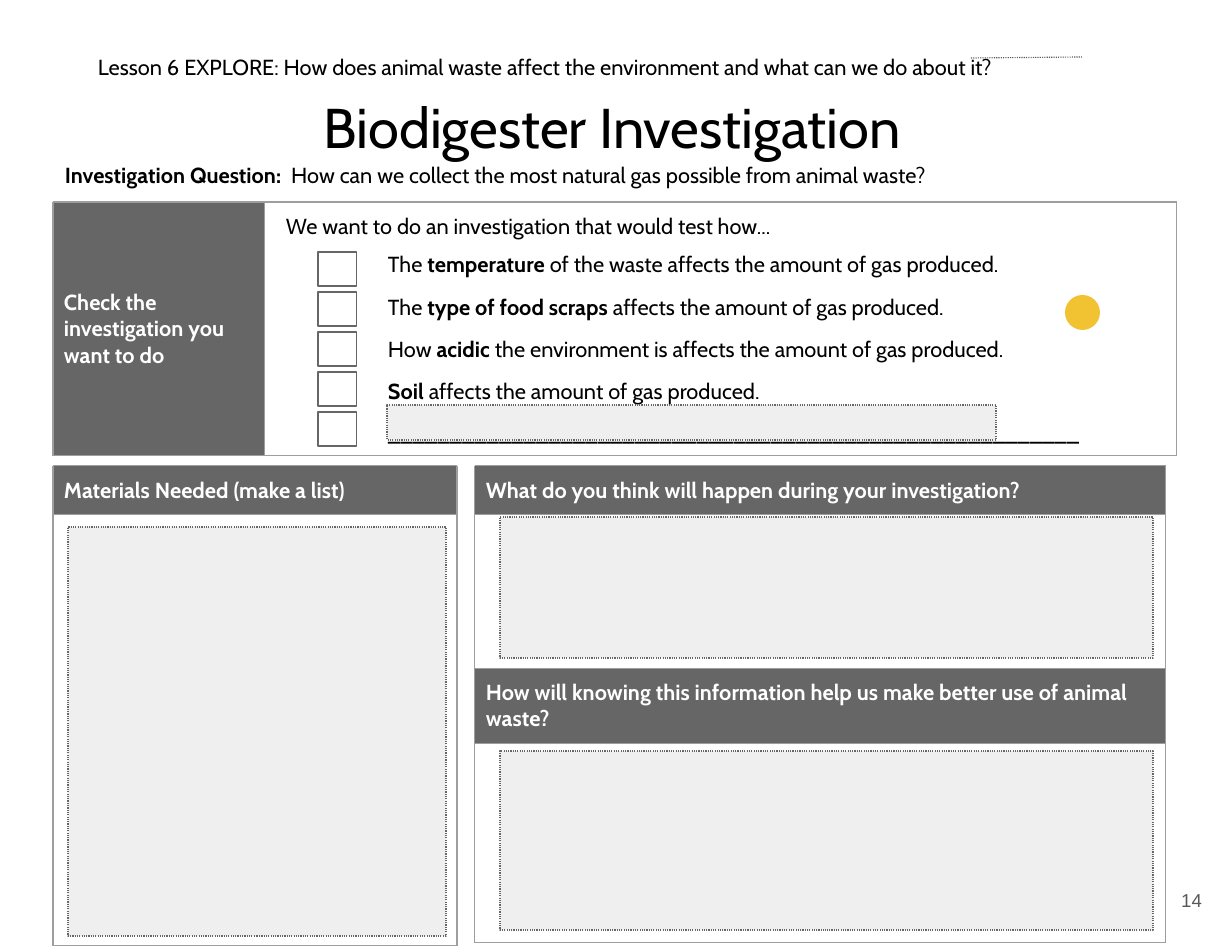
from dataclasses import dataclass

from lxml.etree import SubElement
from pptx import Presentation
from pptx.dml.color import RGBColor
from pptx.enum.dml import MSO_LINE
from pptx.enum.shapes import MSO_CONNECTOR, MSO_SHAPE
from pptx.enum.text import MSO_ANCHOR, PP_ALIGN
from pptx.oxml.ns import qn
from pptx.util import Emu, Pt

LESSON = "Lesson 6 EXPLORE: How does animal waste affect the environment and what can we do about it?"
TITLE = "Biodigester Investigation"
QUESTION = "**Investigation Question:  **How can we collect the most natural gas possible from animal waste?"
CHOICE_HEADING = "**Check the investigation you want to do**"
CHOICE_INTRO = "We want to do an investigation that would test how..."
CHOICES = [
    "The** temperature** of the waste affects the amount of gas produced.",
    "The **type of food scraps **affects the amount of gas produced.",
    "How **acidic** the environment is affects the amount of gas produced.",
    "**Soil** affects the amount of gas produced.",
    "_" * 56,
]
MATERIALS = "**Materials Needed (make a list)**"
PREDICTION = "**What do you think will happen during your investigation?**"
BENEFIT = "**How will knowing this information help us make better use of animal waste?**"
PAGE_NUMBER = "14"

ANSWER_FIELDS = [
    (68, 527, 378, 409),
    (500, 517, 653, 141),
    (500, 751, 653, 179),
    (387, 405, 609, 35),
]
CHECKBOX_LEFT, CHECKBOX_TOP, CHECKBOX_STEP = 318, 252, 40
INSET = 11


@dataclass(frozen=True)
class Theme:
    font: str = "Cabin"
    number_font: str = "Arial"
    ink: str = "000000"
    paper: str = "FFFFFF"
    heading: str = "666666"
    field: str = "EFEFEF"
    border: str = "9E9E9E"
    muted: str = "595959"
    marker: str = "F1C232"
    title_size: int = 36
    body_size: int = 14
    number_size: int = 12
    rule: float = 0.75


THEME = Theme()


def px(length):
    return Emu(round(length * 914400 / 112))


def color(value):
    return RGBColor.from_string(value)


def write(frame, text, append=False, size=THEME.body_size, ink=THEME.ink, font=THEME.font,
          align=PP_ALIGN.LEFT, spacing=1.0, before=0, after=0, indent=0):
    paragraph = frame.add_paragraph() if append else frame.paragraphs[0]
    properties = paragraph._p.get_or_add_pPr()
    properties.set("marL", str(px(indent)))
    properties.set("indent", "0")
    paragraph.alignment = align
    paragraph.line_spacing = spacing
    paragraph.space_before, paragraph.space_after = Pt(before), Pt(after)
    for position, part in enumerate(text.split("**")):
        if part:
            run = paragraph.add_run()
            run.text = part
            run.font.name, run.font.size = font, Pt(size)
            run.font.bold = position % 2 == 1
            run.font.color.rgb = color(ink)


def set_frame(frame, anchor, inset=INSET):
    frame.word_wrap = True
    frame.vertical_anchor = anchor
    frame.margin_left = frame.margin_right = px(inset)
    frame.margin_top = frame.margin_bottom = px(inset)


def add_text(slide, box, text, inset=INSET, **text_format):
    frame = slide.shapes.add_textbox(*map(px, box)).text_frame
    set_frame(frame, MSO_ANCHOR.MIDDLE, inset)
    write(frame, text, **text_format)


def add_box(slide, box, fill, line=None, dotted=False, preset=MSO_SHAPE.RECTANGLE):
    shape = slide.shapes.add_shape(preset, *map(px, box))
    shape.shadow.inherit = False
    shape.fill.solid()
    shape.fill.fore_color.rgb = color(fill)
    if line:
        shape.line.color.rgb = color(line)
        shape.line.width = Pt(THEME.rule)
        if dotted:
            shape.line.dash_style = MSO_LINE.ROUND_DOT
    else:
        shape.line.fill.background()


def style_cell(cell, heading):
    cell.margin_left = cell.margin_right = px(INSET)
    cell.margin_top = cell.margin_bottom = px(INSET)
    properties = cell._tc.get_or_add_tcPr()
    for side in ("a:lnL", "a:lnR", "a:lnT", "a:lnB"):
        edge = SubElement(properties, qn(side), w=str(Pt(THEME.rule)))
        fill = SubElement(edge, qn("a:solidFill"))
        SubElement(fill, qn("a:srgbClr"), val=THEME.border)
    if heading:
        cell.fill.solid()
        cell.fill.fore_color.rgb = color(THEME.heading)
        write(cell.text_frame, heading, ink=THEME.paper)
    else:
        cell.fill.background()


def add_grid(slide, left, top, widths, heights, headings):
    grid = slide.shapes.add_table(len(heights), len(widths), px(left), px(top),
                                  px(sum(widths)), px(sum(heights))).table
    grid.first_row = grid.horz_banding = False
    for column, width in zip(grid.columns, widths):
        column.width = px(width)
    for row, height in zip(grid.rows, heights):
        row.height = px(height)
    for cell, heading in zip(grid.iter_cells(), headings):
        style_cell(cell, heading)
    return grid


def add_header(slide):
    add_text(slide, (87, 37, 917, 55), LESSON, spacing=1.15, after=10)
    title = slide.shapes.title
    title.left, title.top, title.width, title.height = map(px, (-4, 71, 1232, 91))
    set_frame(title.text_frame, MSO_ANCHOR.TOP)
    write(title.text_frame, TITLE, size=THEME.title_size, align=PP_ALIGN.CENTER,
          spacing=1.15, after=10)
    rule = slide.shapes.add_connector(MSO_CONNECTOR.STRAIGHT, *map(px, (971, 58, 1082, 57)))
    rule.line.color.rgb = color(THEME.muted)
    rule.line.width = Pt(THEME.rule)
    rule.line.dash_style = MSO_LINE.ROUND_DOT
    SubElement(rule._element.spPr, qn("a:effectLst"))
    add_text(slide, (54, 148, 1141, 49), QUESTION, spacing=1.15, after=5)


def add_choices(slide):
    grid = add_grid(slide, 53, 202, [212, 912], [254], [CHOICE_HEADING, None])
    grid.cell(0, 0).vertical_anchor = MSO_ANCHOR.MIDDLE
    frame = grid.cell(0, 1).text_frame
    write(frame, CHOICE_INTRO, indent=10)
    for index, choice in enumerate(CHOICES):
        write(frame, choice, append=True, indent=112, before=10 if index else 8)


def main():
    deck = Presentation()
    deck.slide_width, deck.slide_height = px(1232), px(952)
    slide = deck.slides.add_slide(deck.slide_layouts[5])
    add_header(slide)
    add_choices(slide)
    add_grid(slide, 53, 466, [404], [48, 431], [MATERIALS, None])
    add_grid(slide, 475, 466, [691], [48, 154, 75, 199], [PREDICTION, None, BENEFIT, None])
    for index in range(len(CHOICES)):
        add_box(slide, (CHECKBOX_LEFT, CHECKBOX_TOP + index * CHECKBOX_STEP, 39, 34),
                THEME.paper, THEME.heading)
    add_text(slide, (1141, 864, 74, 73), PAGE_NUMBER, inset=13, size=THEME.number_size,
             font=THEME.number_font, ink=THEME.muted, align=PP_ALIGN.RIGHT)
    add_box(slide, (1065, 295, 35, 35), THEME.marker, preset=MSO_SHAPE.OVAL)
    for field in ANSWER_FIELDS:
        add_box(slide, field, THEME.field, THEME.heading, dotted=True)
    deck.save("out.pptx")


if __name__ == "__main__":
    main()
